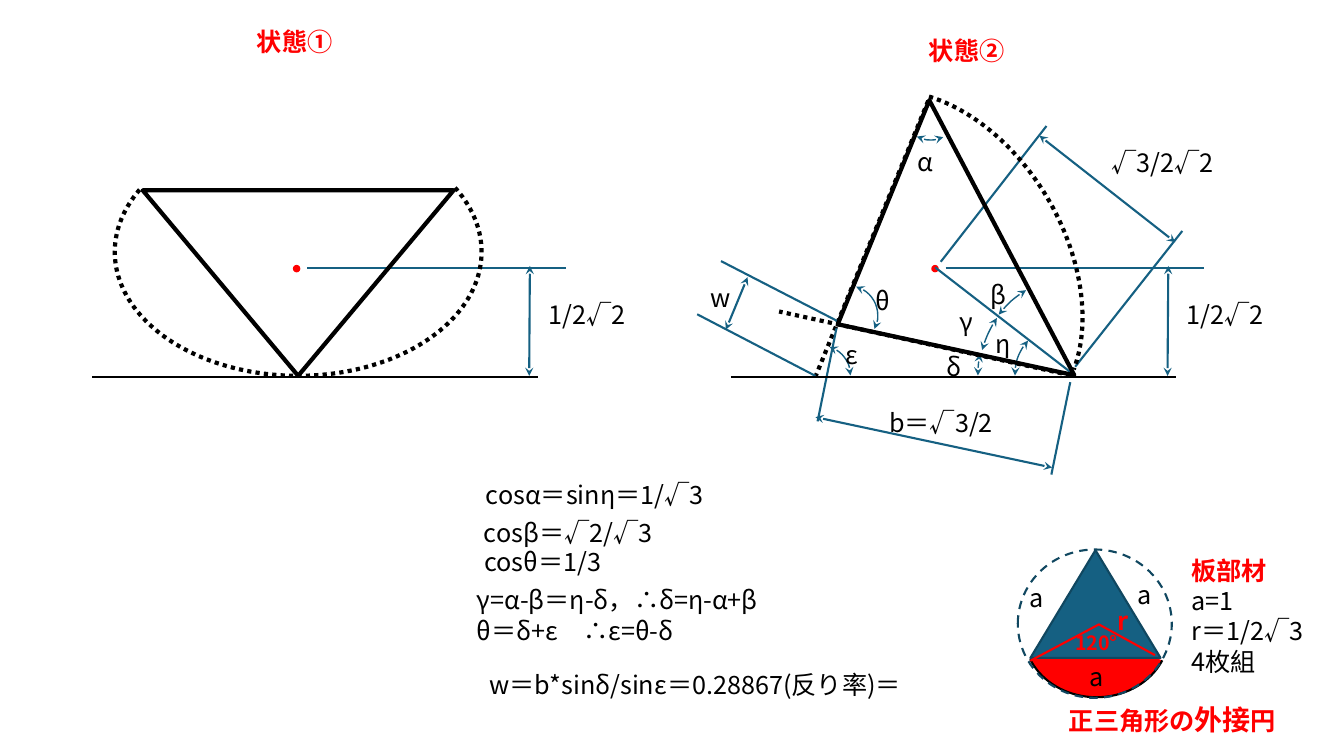
"""Builds a slide on the geometry of two triangle states and the plates they are made from."""
from lxml.etree import SubElement
from pptx import Presentation
from pptx.dml.color import RGBColor
from pptx.enum.dml import MSO_LINE
from pptx.enum.shapes import MSO_CONNECTOR, MSO_SHAPE
from pptx.enum.text import MSO_AUTO_SIZE, PP_ALIGN
from pptx.oxml.ns import qn
from pptx.util import Pt

FONT = "Noto Sans CJK JP"
BLACK, RED, STEEL, NAVY = "000000", "FF0000", "156082", "104760"
STATE_SHIFT = 456


def draw(shape, line, width, dash=None, arrows=False, fill=None):
    """Format the outline, arrowheads and fill of a shape or connector."""
    shape.line.color.rgb = RGBColor.from_string(line)
    shape.line.width = Pt(width)
    if dash:
        shape.line.dash_style = dash
    properties = shape._element.spPr
    if arrows:
        for end in ("a:headEnd", "a:tailEnd"):
            SubElement(properties.find(qn("a:ln")), qn(end), type="stealth")
    SubElement(properties, qn("a:effectLst"))
    if fill:
        shape.fill.solid()
        shape.fill.fore_color.rgb = RGBColor.from_string(fill)
    elif hasattr(shape, "fill"):
        shape.fill.background()


def write(left, top, width, paragraphs, height=29, align=PP_ALIGN.LEFT):
    """Add a text box; each paragraph is a list of (text, size, colour, bold)."""
    box = page.shapes.add_textbox(Pt(left), Pt(top), Pt(width), Pt(height))
    frame = box.text_frame
    frame.word_wrap = True
    frame.auto_size = MSO_AUTO_SIZE.SHAPE_TO_FIT_TEXT
    for index, spans in enumerate(paragraphs):
        para = frame.paragraphs[0] if index == 0 else frame.add_paragraph()
        para.alignment = align
        for text, size, colour, bold in spans:
            span = para.add_run()
            span.text = text
            span.font.color.rgb = RGBColor.from_string(colour)
            for name, value in {"name": FONT, "size": Pt(size), "bold": bold}.items():
                setattr(span.font, name, value)
            SubElement(span.font._element, qn("a:ea"), typeface=FONT)


deck = Presentation()
deck.slide_width, deck.slide_height = Pt(960), Pt(540)
page = deck.slides.add_slide(deck.slide_layouts[6])

dotted = {"line": BLACK, "width": 3, "dash": MSO_LINE.ROUND_DOT}
guide = {"line": STEEL, "width": 1.5}
dimension = {**guide, "arrows": True}
ground = {"line": BLACK, "width": 1.5}
angle_mark = {"line": STEEL, "width": 1, "arrows": True}

segments = [
    (663, 72, 582.5, 269, dotted),
    (764.5, 268, 556.5, 222.5, dotted),
    (582.5, 268.5, 498, 224.5, guide),
    (598.5, 229.5, 515, 186.5, guide),
    (668, 191, 765.5, 266.5, guide),
    (844.5, 165, 768, 262, guide),
    (747.5, 90, 672, 187, guide),
    (597.5, 234.5, 584, 301, guide),
    (764.5, 273, 751, 339, guide),
    (518.5, 235.5, 534, 198, dimension),
    (742.5, 97, 839.5, 173, dimension),
    (582.5, 298, 751.5, 334, dimension),
]
for shift in (0, STATE_SHIFT):
    segments += [
        (66 + shift, 269, 384 + shift, 269, ground),
        (219.5 + shift, 191.5, 404 + shift, 191.5, guide),
        (378.5 + shift, 190, 378 + shift, 268.5, dimension),
    ]
    centre = page.shapes.add_shape(
        MSO_SHAPE.OVAL, Pt(210 + shift), Pt(190), Pt(3.8), Pt(3.8))
    draw(centre, RED, 1.5, fill=RED)
    write(384.5 + shift, 210.5, 85, [[("1/2√2", 18, BLACK, False)]])

for x1, y1, x2, y2, look in segments:
    segment = page.shapes.add_connector(
        MSO_CONNECTOR.STRAIGHT, Pt(x1), Pt(y1), Pt(x2), Pt(y2))
    draw(segment, **look)

arcs = [
    (82, 91.5, 262, 177, 0, 337.73, 201.48, dotted),
    (541, 98, 262, 177, 59.4, 206.49, 339.77, dotted),
    (698.5, 196.5, 138, 152, 0, 198.74, 219.27, angle_mark),
    (698.5, 193.5, 139.5, 149, 0, 179.77, 192.57, angle_mark),
    (725, 232, 70.5, 70.5, 0, 178.36, 222.74, angle_mark),
    (697, 198, 138, 152, 0, 223.07, 243.61, angle_mark),
    (566.5, 247, 41, 42.5, 0, 285.29, 359.78, angle_mark),
    (643.5, 57.5, 42.5, 42.5, 0, 64.93, 117.62, angle_mark),
    (584.5, 204, 42.5, 42.5, 0, 285.94, 27.32, angle_mark),
    (731.5, 407.5, 103.5, 90.5, 0, 21.98, 159.08, {**ground, "fill": RED}),
]
for left, top, width, height, turn, start, end, look in arcs:
    arc = page.shapes.add_shape(MSO_SHAPE.ARC, Pt(left), Pt(top), Pt(width), Pt(height))
    arc.rotation = turn
    arc.adjustments[0], arc.adjustments[1] = start * 0.6, end * 0.6
    draw(arc, **look)

outline = {"line": BLACK, "width": 3}
plate = {"line": NAVY, "width": 1.5, "fill": STEEL}
for left, top, width, height, turn, flipped, look in [
    (102, 136, 222, 132.5, 0, True, outline),
    (546, 134.5, 222, 132.5, 62.2, True, outline),
    (736, 393, 93, 77, 0, False, plate),
]:
    triangle = page.shapes.add_shape(
        MSO_SHAPE.ISOSCELES_TRIANGLE, Pt(left), Pt(top), Pt(width), Pt(height))
    triangle.rotation = turn
    if flipped:
        triangle._element.spPr.xfrm.set("flipV", "1")
    draw(triangle, **look)

builder = page.shapes.build_freeform(736.5, 471.5, scale=Pt(1))
builder.add_line_segments([(785, 446.5), (825, 468.5)], close=False)
draw(builder.convert_to_shape(), RED, 1.5)
circle = page.shapes.add_shape(MSO_SHAPE.OVAL, Pt(727), Pt(392.5), Pt(110), Pt(106))
draw(circle, NAVY, 1.5, MSO_LINE.DASH)

for left, top, width, text in [
    (500.5, 198, 54, "w"),
    (787, 101.5, 123, "√3/2√2"),
    (669, 247.5, 59, "δ"),
    (648, 101, 59, "α"),
    (700.5, 196, 59, "β"),
    (678, 215.5, 59, "γ"),
    (597, 239, 59, "ε"),
    (704, 231, 38, "η"),
    (618, 200, 35, "θ"),
    (628, 287.5, 142.5, "b＝√3/2"),
    (340, 338.5, 236, "cosα＝sinη＝1/√3"),
    (338.5, 366, 183.5, "cosβ＝√2/√3"),
    (339, 386.5, 183, "cosθ＝1/3"),
    (342.5, 474.5, 407, "w＝b*sinδ/sinε＝0.28867(反り率)＝"),
    (728, 412.5, 48, "a"),
    (771, 468.5, 48, "a"),
    (805.5, 410.5, 48, "a"),
]:
    write(left, top, width, [[(text, 18, BLACK, False)]])

for left, top, width, text, size in [
    (176.5, 15, 88, "状態①", 18),
    (656.5, 21.5, 88, "状態②", 18),
    (791.5, 429, 79, "r", 18),
    (761, 447, 79, "120°", 14),
]:
    write(left, top, width, [[(text, size, RED, True)]])

relations = ("γ=α-β＝η-δ，∴δ=η-α+β", "θ＝δ+ε　∴ε=θ-δ")
write(333.5, 414, 330.5, [[(text, 18, BLACK, False)] for text in relations], 51)
plate_facts = [[(text, 18, BLACK, False)] for text in ("a=1", "r＝1/2√3", "4枚組")]
write(844, 393, 132, [[("板部材", 18, RED, True)], *plate_facts], 94)
caption = [("正三角形の", 18, RED, True), ("外接", 20, RED, True), ("円", 18, RED, True)]
write(728.5, 498, 218, [caption], 43, PP_ALIGN.CENTER)

deck.save("out.pptx")
